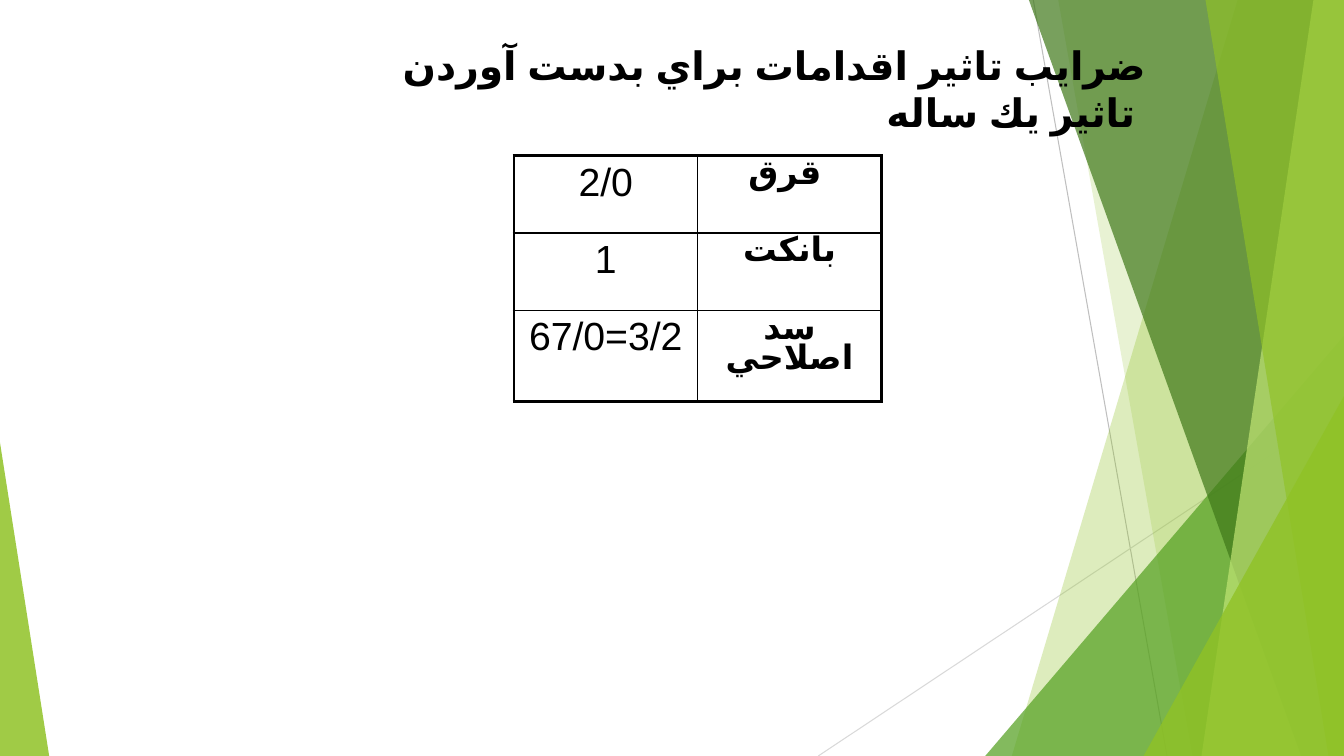
from dataclasses import dataclass

from lxml import etree
from pptx import Presentation
from pptx import util as u
from pptx.dml.color import RGBColor
from pptx.enum import lang, shapes, text
from pptx.oxml import ns


@dataclass(frozen=True)
class Theme:
    font: str = "Arial"
    ink: str = "000000"
    lime: str = "90C226"
    pale: str = "C0E474"
    green: str = "54A021"
    forest: str = "3F7819"
    gray: str = "BFBFBF"
    silver: str = "D9D9D9"
    title: int = 28
    number: int = 28
    label: int = 24
    outer: float = 2.25
    inner: float = 1


T = Theme()
WIDTH, HEIGHT = 33.87, 19.05
TITLE = "ضرايب تاثير اقدامات براي بدست آوردن تاثير يك ساله "
COEFFICIENTS = [("2/0", "قرق "), ("1", "بانكت"), ("67/0=3/2", "سد اصلاحي")]


def add_child(parent, tag, **attrs):
    return etree.SubElement(parent, ns.qn(tag), attrs)


def format_text(p, size, bold, align):
    p.alignment = align
    for r in p.runs:
        r.font.name = T.font
        r.font.size = u.Pt(size)
        r.font.bold = bold
        r.font.color.rgb = RGBColor.from_string(T.ink)
        r.font.language_id = lang.MSO_LANGUAGE_ID.FARSI
        add_child(r.font._element, "a:cs", typeface=T.font)


def paint(sp, color, opacity):
    sp.shadow.inherit = False
    sp.line.fill.background()
    sp.fill.solid()
    sp.fill.fore_color.rgb = RGBColor.from_string(color)
    clr = sp.fill._xPr.find(ns.qn("a:solidFill"))[0]
    add_child(clr, "a:alpha", val=str(opacity * 1000))


def add_line(s, start, end, color):
    line = s.shapes.add_connector(shapes.MSO_CONNECTOR.STRAIGHT,
                                  *(u.Cm(v) for v in start + end))
    line.line.color.rgb = RGBColor.from_string(color)
    line.line.width = u.Pt(0.75)
    add_child(line._element.spPr, "a:effectLst")


def add_facet(s, box, top_x, bottom_x, color, opacity):
    left, top, width, height = box
    right, bottom = left + width, top + height
    outline = [(right, top), (right, bottom), (left + bottom_x, bottom)]
    builder = s.shapes.build_freeform(u.Cm(left + top_x), u.Cm(top))
    builder.add_line_segments([(u.Cm(x), u.Cm(y)) for x, y in outline])
    paint(builder.convert_to_shape(), color, opacity)


def add_corner(s, box, width, height, apex, color, opacity):
    left, top, box_width, box_height = box
    x = left + apex * (box_width - width)
    sp = s.shapes.add_shape(shapes.MSO_SHAPE.ISOSCELES_TRIANGLE, u.Cm(x),
                            u.Cm(top + box_height - height),
                            u.Cm(width), u.Cm(height))
    sp.adjustments[0] = apex
    paint(sp, color, opacity)


def add_backdrop(s, box):
    left, top, width, height = box
    right, bottom = left + width, top + height
    add_line(s, (left + 26.04, top), (left + 29.41, bottom), T.gray)
    add_line(s, (right, top + 10.24), (left + 20.62, bottom), T.silver)
    add_facet(s, box, 31.19, 25.5, T.lime, 30)
    add_facet(s, box, 26.67, 30.05, T.lime, 20)
    add_corner(s, box, 9.04, 10.59, 1, T.green, 72)
    add_facet(s, box, 25.93, 32.79, T.forest, 70)
    add_facet(s, box, 33.1, 30.28, T.pale, 70)
    add_facet(s, box, 30.38, 33.48, T.lime, 65)
    add_corner(s, box, 5.05, 9.07, 1, T.lime, 80)
    add_corner(s, box, 1.24, 7.9, 0, T.lime, 85)


def add_title(s, box):
    title = s.shapes.title
    s.shapes._spTree.append(title._element)
    title.left, title.top, title.width, title.height = map(u.Cm, box)
    tf = title.text_frame
    tf.text = TITLE
    tf.word_wrap = True
    tf.auto_size = text.MSO_AUTO_SIZE.SHAPE_TO_FIT_TEXT
    tf.vertical_anchor = text.MSO_ANCHOR.TOP
    format_text(tf.paragraphs[0], T.title, True, text.PP_ALIGN.RIGHT)


def set_borders(cell, outer_sides):
    tc_pr = cell._tc.get_or_add_tcPr()
    for i, side in enumerate("LRTB"):
        width = T.outer if side in outer_sides else T.inner
        ln = etree.Element(ns.qn(f"a:ln{side}"), w=str(u.Pt(width)))
        add_child(add_child(ln, "a:solidFill"), "a:srgbClr", val=T.ink)
        tc_pr.insert(i, ln)


def add_coefficients(s, box, row_heights):
    last = len(COEFFICIENTS) - 1
    table = s.shapes.add_table(last + 1, 2, *map(u.Cm, box)).table
    table.first_row = table.horz_banding = False
    for column in table.columns:
        column.width = u.Cm(box[2] / 2)
    for i, (values, height) in enumerate(zip(COEFFICIENTS, row_heights)):
        table.rows[i].height = u.Cm(height)
        for j, value in enumerate(values):
            cell = table.cell(i, j)
            cell.fill.background()
            set_borders(cell, "LR"[j] + ("T" if i == 0 else "") + ("B" if i == last else ""))
            p = cell.text_frame.paragraphs[0]
            p.text = value
            is_label = j == 1
            format_text(p, T.label if is_label else T.number, is_label, text.PP_ALIGN.CENTER)
            if is_label:
                p.line_spacing = 0.8


def main():
    prs = Presentation()
    prs.slide_width, prs.slide_height = u.Cm(WIDTH), u.Cm(HEIGHT)
    s = prs.slides.add_slide(prs.slide_layouts[5])
    add_backdrop(s, (0, 0, WIDTH, HEIGHT))
    add_title(s, (9.32, 0.91, 19.81, 2.4))
    add_coefficients(s, (12.95, 3.92, 9.26, 6.2), (1.95, 1.95, 2.3))
    prs.save("out.pptx")


if __name__ == "__main__":
    main()
